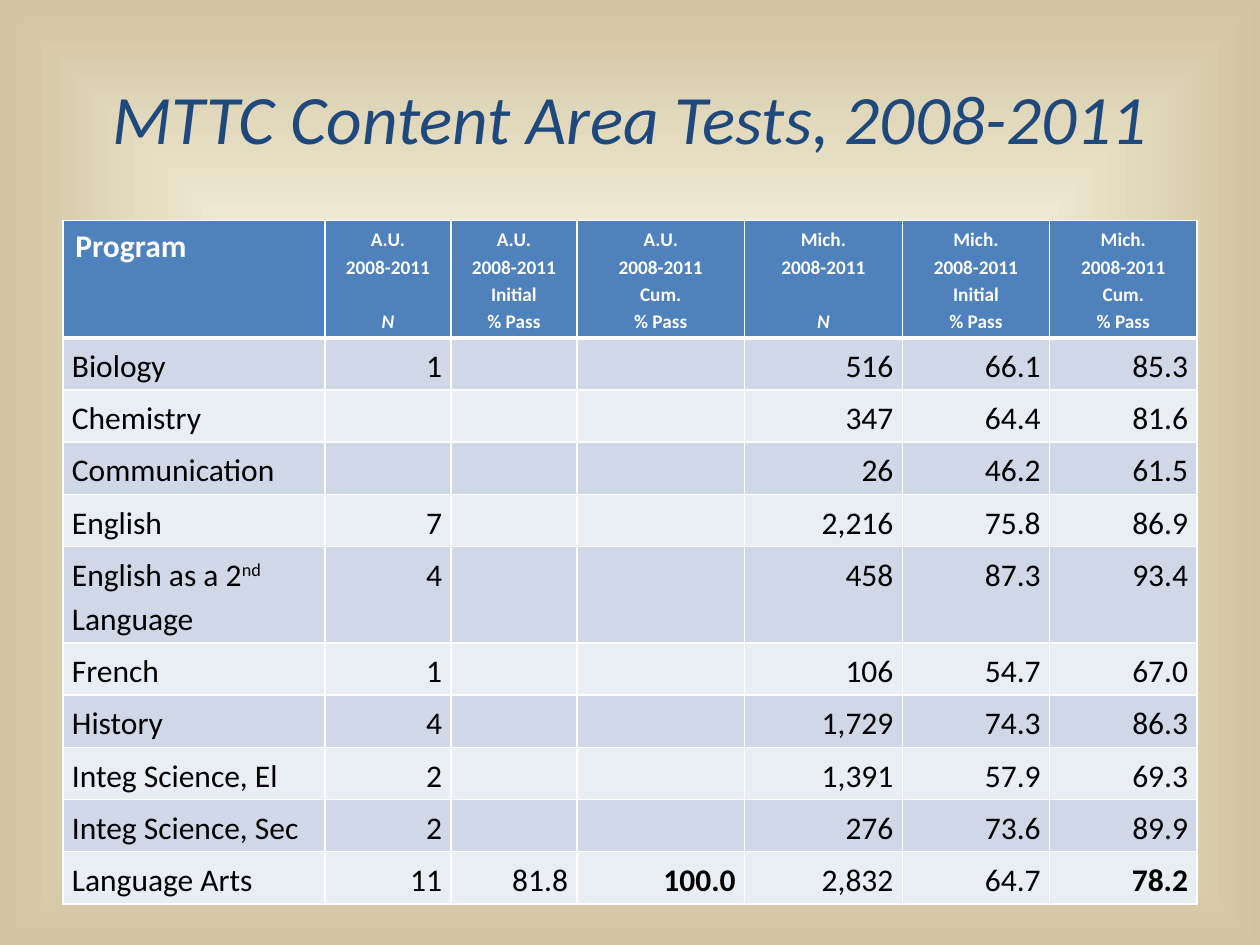
from collections import namedtuple
from dataclasses import dataclass

from lxml.etree import SubElement
from pptx import Presentation
from pptx.dml.color import RGBColor as Rgb
from pptx.enum.text import MSO_ANCHOR as Anchor, MSO_AUTO_SIZE as AutoSize, PP_ALIGN as Align
from pptx.oxml import parse_xml
from pptx.oxml.ns import nsdecls, qn
from pptx.util import Cm, Pt

Box = namedtuple("Box", "left top width height")


@dataclass(frozen=True)
class Theme:
    font: str = "Calibri"
    title: str = "1F497D"
    header: str = "4F81BD"
    white: str = "FFFFFF"
    ink: str = "000000"
    bands: tuple = ("D0D8E8", "E9EDF4")
    background: tuple = ((0, "FFEFD1"), (52, "F0EBD5"), (100, "D1C39F"))
    title_size: float = 39.6
    body_size: int = 18
    label_size: int = 11
    line_spacing: float = 1.15
    rule: int = 1
    heavy_rule: int = 3


THEME = Theme()
YEARS = "2008-2011"
COLUMN_WIDTHS = (5.28, 2.54, 2.54, 3.38, 3.18, 2.97, 2.97)
HEADER_HEIGHT, ROW_HEIGHT, TALL_ROW_HEIGHT = 1.75, 1.04, 1.91
MEASURES = (("N",), ("Initial", "% Pass"), ("Cum.", "% Pass"))
HEADERS = [(group, YEARS, *measure) for group in ("A.U.", "Mich.") for measure in MEASURES]
ESL = "English as a 2nd Language"
ROWS = (
    ("Biology", "1", "", "", "516", "66.1", "85.3"),
    ("Chemistry", "", "", "", "347", "64.4", "81.6"),
    ("Communication", "", "", "", "26", "46.2", "61.5"),
    ("English", "7", "", "", "2,216", "75.8", "86.9"),
    (ESL, "4", "", "", "458", "87.3", "93.4"),
    ("French", "1", "", "", "106", "54.7", "67.0"),
    ("History", "4", "", "", "1,729", "74.3", "86.3"),
    ("Integ Science, El", "2", "", "", "1,391", "57.9", "69.3"),
    ("Integ Science, Sec", "2", "", "", "276", "73.6", "89.9"),
    ("Language Arts", "11", "81.8", "100.0", "2,832", "64.7", "78.2"),
)
BOLD_CELLS = {("Language Arts", 3), ("Language Arts", 6)}


def set_format(target, values):
    for name, value in values.items():
        setattr(target, name, value)


def add_span(para, text, size, color, bold=False, italic=False):
    span = para.add_run()
    span.text = text
    set_format(span.font, {"name": THEME.font, "size": Pt(size), "bold": bold, "italic": italic})
    span.font.color.rgb = Rgb.from_string(color)
    return span


def paint_background(page):
    page.background.fill.solid()
    solid = page.element.find(".//" + qn("p:bgPr")).find(qn("a:solidFill"))
    stops = "".join(
        f'<a:gs pos="{position * 1000}"><a:srgbClr val="{color}"/></a:gs>'
        for position, color in THEME.background
    )
    gradient = parse_xml(
        f'<a:gradFill {nsdecls("a")} rotWithShape="1"><a:gsLst>{stops}</a:gsLst>'
        '<a:path path="shape"><a:fillToRect l="50000" t="50000" r="50000" b="50000"/></a:path>'
        "</a:gradFill>"
    )
    solid.getparent().replace(solid, gradient)


def place_title(page, box, text):
    title = page.shapes.title
    set_format(title, box._asdict())
    set_format(title.text_frame, {
        "word_wrap": True, "auto_size": AutoSize.NONE, "vertical_anchor": Anchor.MIDDLE,
    })
    para = title.text_frame.paragraphs[0]
    para.alignment = Align.CENTER
    add_span(para, text, THEME.title_size, THEME.title, italic=True)


def style_cell(cell, fill, top, bottom, inset_x=0.18, inset_y=0.08):
    """Set insets, white rules of the given top and bottom weight, and fill."""
    set_format(cell, {
        "margin_left": Cm(inset_x), "margin_right": Cm(inset_x),
        "margin_top": Cm(inset_y), "margin_bottom": Cm(inset_y),
        "vertical_anchor": Anchor.TOP,
    })
    properties = cell._tc.get_or_add_tcPr()
    for side, weight in zip("LRTB", (THEME.rule, THEME.rule, top, bottom)):
        line = SubElement(properties, qn(f"a:ln{side}"), w=str(Pt(weight)))
        SubElement(SubElement(line, qn("a:solidFill")), qn("a:srgbClr"), val=THEME.white)
    cell.fill.solid()
    cell.fill.fore_color.rgb = Rgb.from_string(fill)


def write_label(cell, lines):
    frame = cell.text_frame
    for index, text in enumerate(lines):
        para = frame.add_paragraph() if index else frame.paragraphs[0]
        is_count = text == "N"
        set_format(para, {"alignment": Align.CENTER, "line_spacing": THEME.line_spacing})
        if is_count:
            para.space_before = Pt(15.4)
        add_span(para, text, THEME.label_size, THEME.white, bold=True, italic=is_count)


def fill_header(table):
    program, *labels = table.rows[0].cells
    style_cell(program, THEME.header, THEME.rule, THEME.heavy_rule, 0.25, 0.13)
    add_span(program.text_frame.paragraphs[0], "Program", THEME.body_size, THEME.white, bold=True)
    for cell, lines in zip(labels, HEADERS):
        style_cell(cell, THEME.header, THEME.rule, THEME.heavy_rule)
        write_label(cell, lines)


def write_value(cell, text, align, bold):
    para = cell.text_frame.paragraphs[0]
    set_format(para, {"alignment": align, "line_spacing": THEME.line_spacing})
    para.font.size = Pt(THEME.body_size)
    before, ordinal, after = text.partition("nd ") if text == ESL else (text, "", "")
    for part in filter(None, (before, ordinal, after)):
        span = add_span(para, part, THEME.body_size, THEME.ink, bold=bold)
        if part == ordinal:
            span._r.get_or_add_rPr().set("baseline", "30000")


def fill_body(table):
    for index, values in enumerate(ROWS):
        top = THEME.rule if index else THEME.heavy_rule
        for column, text in enumerate(values):
            cell = table.cell(index + 1, column)
            style_cell(cell, THEME.bands[index % 2], top, THEME.rule)
            align = Align.RIGHT if column else Align.LEFT
            write_value(cell, text, align, (values[0], column) in BOLD_CELLS)


def place_results(page, box):
    table = page.shapes.add_table(len(ROWS) + 1, len(COLUMN_WIDTHS), *box).table
    for column, width in zip(table.columns, COLUMN_WIDTHS):
        column.width = Cm(width)
    heights = [TALL_ROW_HEIGHT if values[0] == ESL else ROW_HEIGHT for values in ROWS]
    for row, height in zip(table.rows, [HEADER_HEIGHT, *heights]):
        row.height = Cm(height)
    fill_header(table)
    fill_body(table)


def main():
    deck = Presentation()
    set_format(deck, {"slide_width": Cm(25.4), "slide_height": Cm(19.05)})
    page = deck.slides.add_slide(deck.slide_layouts[5])
    paint_background(page)
    place_title(page, Box(Cm(1.27), Cm(0.76), Cm(22.86), Cm(3.18)),
                f"MTTC Content Area Tests, {YEARS}")
    place_results(page, Box(Cm(1.27), Cm(4.45), Cm(22.86), Cm(13.46)))
    deck.save("out.pptx")


if __name__ == "__main__":
    main()
